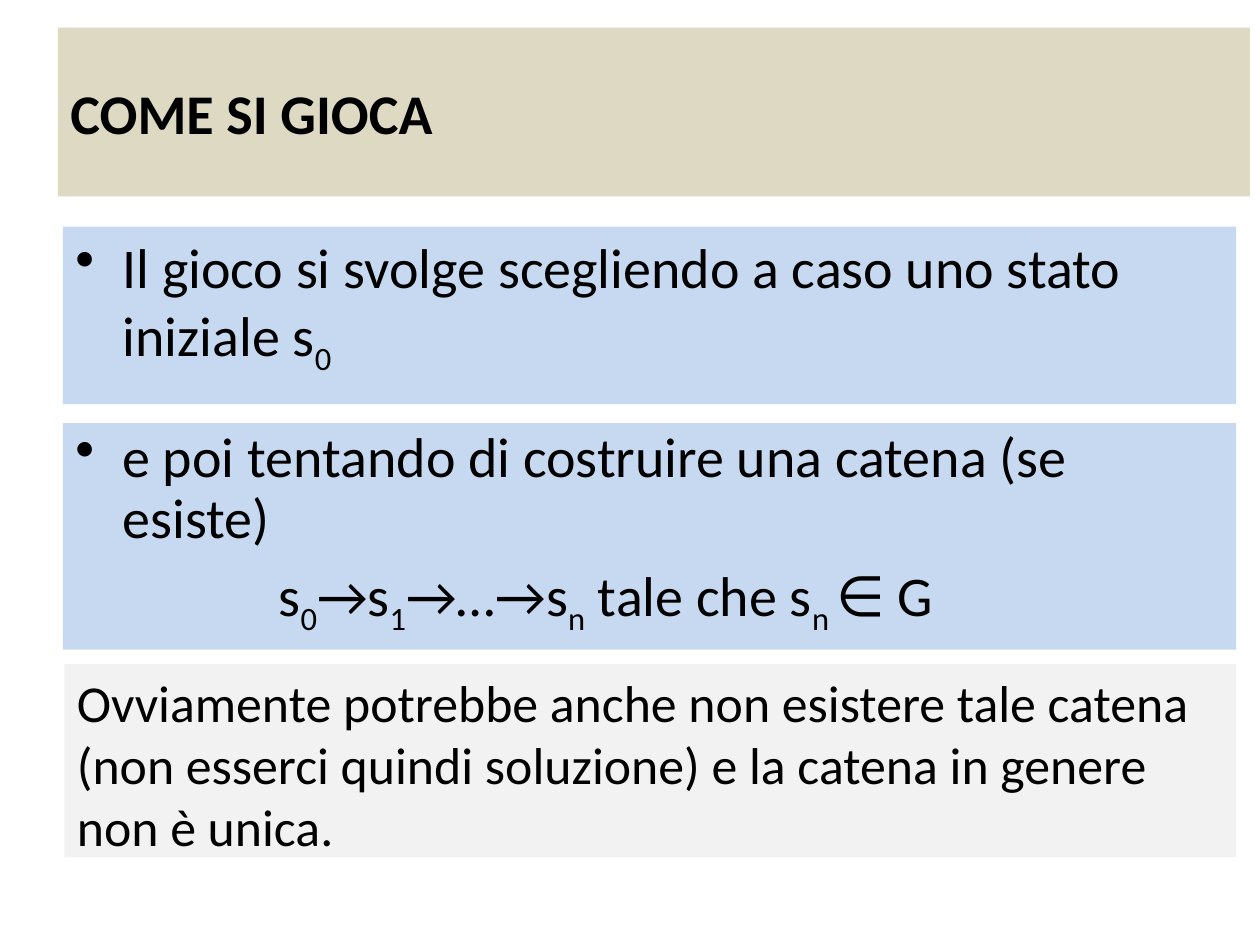
from dataclasses import dataclass

from lxml import etree
from pptx import Presentation
from pptx.dml.color import RGBColor
from pptx.enum.shapes import MSO_SHAPE
from pptx.enum.text import MSO_ANCHOR, PP_ALIGN
from pptx.oxml.ns import qn
from pptx.util import Cm, Pt

RECT = MSO_SHAPE.RECTANGLE
TOP = MSO_ANCHOR.TOP
MIDDLE = MSO_ANCHOR.MIDDLE
LEFT = PP_ALIGN.LEFT

BLACK = RGBColor(0x00, 0x00, 0x00)
SAND = RGBColor(0xDD, 0xD9, 0xC3)
BLUE = RGBColor(0xC6, 0xD9, 0xF1)
GREY = RGBColor(0xF2, 0xF2, 0xF2)
FONT = "Calibri"
HANG = 0.95


@dataclass
class Para:
    texts: list[str]
    bullet: bool = False
    indent: float = 0
    lines: float = 1


@dataclass
class Panel:
    left: float
    top: float
    width: float
    height: float
    fill: RGBColor
    paras: list[Para]
    size: float = 32
    bold: bool = False
    anchor: MSO_ANCHOR = TOP


PANELS = [
    Panel(1.17, 0.56, 24.03, 3.4, SAND, [Para(["COME SI GIOCA"])],
          bold=True, anchor=MIDDLE),
    Panel(1.27, 4.57, 23.65, 3.58, BLUE, [
        Para(["Il gioco si svolge scegliendo a caso uno stato iniziale s", "0"],
             bullet=True)]),
    Panel(1.3, 13.39, 23.62, 3.89, GREY, [
        Para(["Ovviamente potrebbe anche non esistere tale catena (non esserci "
              "quindi soluzione) e la catena in genere non è unica."])],
          size=29.6),
    Panel(1.27, 8.53, 23.65, 4.57, BLUE, [
        Para(["e poi tentando di costruire una catena (se esiste)"],
             bullet=True, lines=0.9),
        Para(["s", "0", "→s", "1", "→…→s", "n", " tale che s", "n ", "∈ G"],
             indent=4.1, lines=0.9)]),
]


def write_para(para, data: Para, panel: Panel) -> None:
    para.alignment = LEFT
    para.line_spacing = data.lines
    para.space_before = Pt(panel.size * 0.2)
    font = para.font
    font.name = FONT
    font.size = Pt(panel.size)
    font.bold = panel.bold
    font.color.rgb = BLACK
    props = para._p.get_or_add_pPr()
    if data.bullet:
        props.set("marL", str(Cm(HANG)))
        props.set("indent", str(-Cm(HANG)))
        mark = etree.Element(qn("a:buChar"), char="•")
        props.find(qn("a:defRPr")).addprevious(mark)
    elif data.indent:
        props.set("marL", str(Cm(data.indent)))
    for place, text in enumerate(data.texts):
        run = para.add_run()
        run.text = text
        if place % 2:
            run._r.get_or_add_rPr().set("baseline", "-25000")


def draw_panel(slide, panel: Panel) -> None:
    shape = slide.shapes.add_shape(
        RECT, Cm(panel.left), Cm(panel.top), Cm(panel.width), Cm(panel.height))
    shape.shadow.inherit = False
    shape.fill.solid()
    shape.fill.fore_color.rgb = panel.fill
    shape.line.fill.background()
    frame = shape.text_frame
    frame.word_wrap = True
    frame.vertical_anchor = panel.anchor
    frame.margin_right = Cm(0.4)
    for place, data in enumerate(panel.paras):
        para = frame.add_paragraph() if place else frame.paragraphs[0]
        write_para(para, data, panel)


def main() -> None:
    deck = Presentation()
    deck.slide_width = Cm(25.4)
    deck.slide_height = Cm(19.05)
    slide = deck.slides.add_slide(deck.slide_layouts[6])
    for panel in PANELS:
        draw_panel(slide, panel)
    deck.save("out.pptx")


if __name__ == "__main__":
    main()
